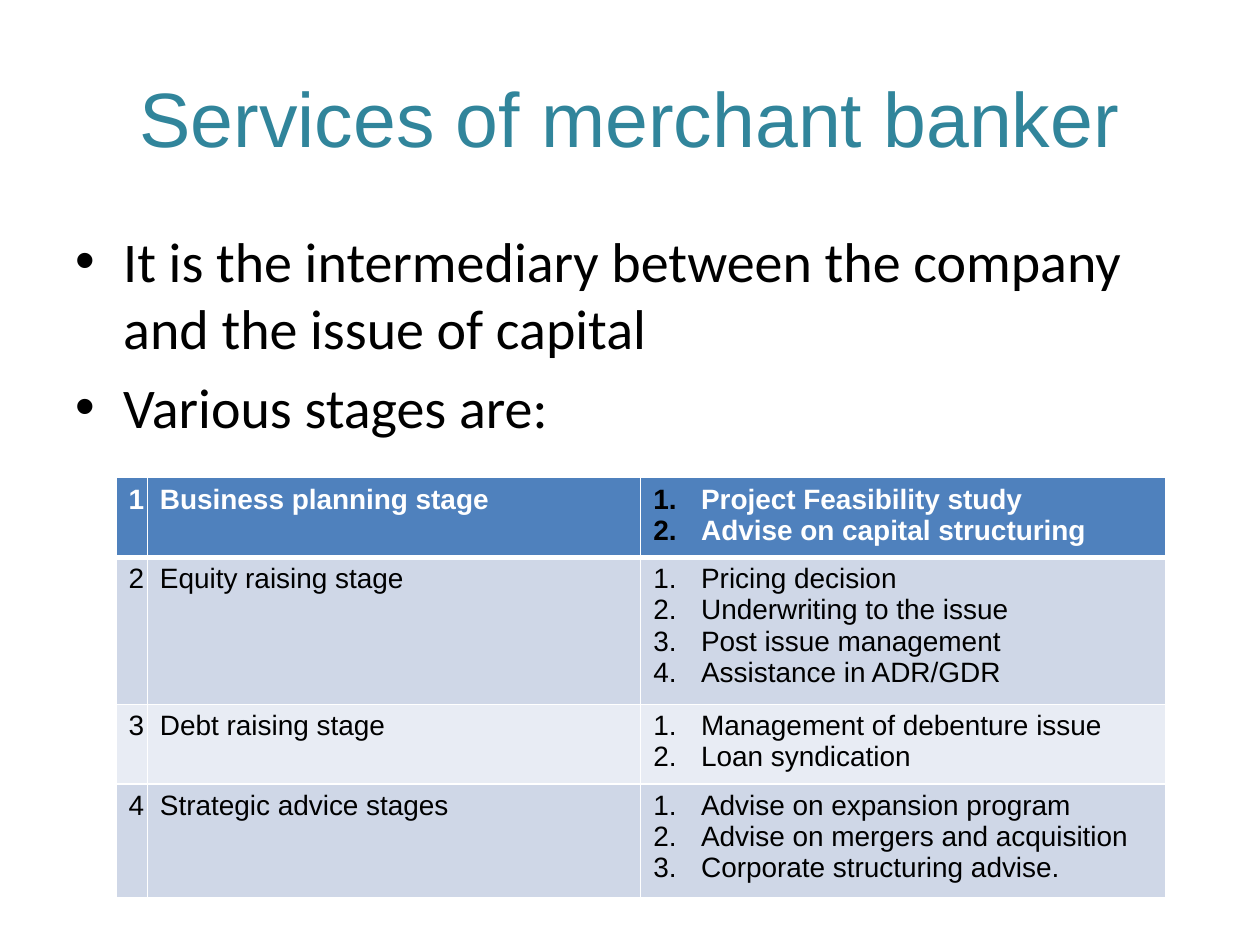
from lxml.etree import SubElement
from pptx import Presentation
from pptx.dml.color import RGBColor as RGB
from pptx.enum.text import MSO_ANCHOR as ANCHOR, PP_ALIGN as ALIGN
from pptx.oxml.ns import qn
from pptx.util import Inches, Pt

TEAL = RGB(0x31, 0x85, 0x9B)
BLACK = RGB(0, 0, 0)
WHITE = RGB(255, 255, 255)
BLUE = RGB(0x4F, 0x81, 0xBD)
BAND_DARK = RGB(0xCF, 0xD7, 0xE7)
BAND_LIGHT = RGB(0xE8, 0xEC, 0xF4)

TITLE_BOX = (0.5, 0.3, 9, 1.25)
BODY_BOX = (0.5, 1.75, 9, 4.95)
TABLE_BOX = (0.92, 3.79, 8.33, 3.1)
COLUMN_SHARES = (0.03, 0.47, 0.5)
LINE_HEIGHT, ROW_PADDING, HANGING = 0.245, 0.1, 0.38

TITLE_FONT = dict(name="Arial", size=Pt(44))
BODY_FONT = dict(name="Calibri", size=Pt(32))
CELL_FONT = dict(name="Arial", size=Pt(16))

POINTS = (
    "It is the intermediary between the company and the issue of capital",
    "Various stages are:",
)
STAGES = (
    ("Business planning stage",
     ("Project Feasibility study", "Advise on capital structuring")),
    ("Equity raising stage",
     ("Pricing decision", "Underwriting to the issue",
      "Post issue management", "Assistance in ADR/GDR")),
    ("Debt raising stage",
     ("Management of debenture issue", "Loan syndication")),
    ("Strategic advice stages",
     ("Advise on expansion program", "Advise on mergers and acquisition",
      "Corporate structuring advise.")),
)


def add_solid(parent, tag, color):
    """Append a colour element to an XML parent, wrapped in the given tag."""
    SubElement(SubElement(parent, qn(tag)), qn("a:srgbClr")).set("val", str(color))


def add_bullet(p, tag, **attributes):
    """Give a paragraph a hanging indent and a black bullet or number."""
    pPr = p._p.get_or_add_pPr()
    pPr.set("marL", str(Inches(HANGING)))
    pPr.set("indent", str(-Inches(HANGING)))
    add_solid(pPr, "a:buClr", BLACK)
    SubElement(pPr, qn("a:buFont")).set("typeface", "Arial")
    bullet = SubElement(pPr, qn(tag))
    for key, value in attributes.items():
        bullet.set(key, value)


def write_lines(tf, lines, color, font):
    """Write one formatted paragraph per line and return the paragraphs."""
    for i, line in enumerate(lines):
        p = tf.add_paragraph() if i else tf.paragraphs[0]
        r = p.add_run()
        r.text = line
        r.font.color.rgb = color
        for key, value in font.items():
            setattr(r.font, key, value)
    return tf.paragraphs


def add_title(slide, box):
    """Place and format the title placeholder."""
    sp = slide.shapes.title
    for key, value in zip(("left", "top", "width", "height"), box):
        setattr(sp, key, Inches(value))
    tf = sp.text_frame
    tf.vertical_anchor = ANCHOR.MIDDLE
    p, = write_lines(tf, ["Services of merchant banker"], TEAL, TITLE_FONT)
    p.alignment = ALIGN.CENTER


def add_body(slide, box):
    """Place the bulleted introduction."""
    tf = slide.shapes.add_textbox(*map(Inches, box)).text_frame
    tf.word_wrap = True
    for i, p in enumerate(write_lines(tf, POINTS, BLACK, BODY_FONT)):
        p.space_before = Pt(6.4 if i else 0)
        add_bullet(p, "a:buChar", char="•")


def format_cell(cell, fill, bottom):
    """Give a cell white borders and a solid fill."""
    tcPr = cell._tc.get_or_add_tcPr()
    for side, width in zip("LRTB", (1, 1, 1, bottom)):
        ln = SubElement(tcPr, qn(f"a:ln{side}"))
        ln.set("w", str(Pt(width)))
        add_solid(ln, "a:solidFill", WHITE)
    cell.fill.solid()
    cell.fill.fore_color.rgb = fill


def add_stage_table(slide, box):
    """Place the table of stages with their numbered services."""
    table = slide.shapes.add_table(
        len(STAGES), len(COLUMN_SHARES), *map(Inches, box)).table
    for column, share in zip(table.columns, COLUMN_SHARES):
        column.width = Inches(box[2] * share)
    for i, (stage, services) in enumerate(STAGES):
        header = i == 0
        fill = BLUE if header else BAND_DARK if i % 2 else BAND_LIGHT
        color = WHITE if header else BLACK
        font = dict(CELL_FONT, bold=header)
        row = table.rows[i]
        row.height = Inches(ROW_PADDING + LINE_HEIGHT * len(services))
        for cell, lines in zip(row.cells, ([str(i + 1)], [stage], services)):
            format_cell(cell, fill, 3 if header else 1)
            paragraphs = write_lines(cell.text_frame, lines, color, font)
            if lines is services:
                for p in paragraphs:
                    add_bullet(p, "a:buAutoNum", type="arabicPeriod")


def main():
    """Build and save the slide."""
    prs = Presentation()
    prs.slide_width, prs.slide_height = Inches(10), Inches(7.5)
    slide = prs.slides.add_slide(prs.slide_layouts[5])
    add_title(slide, TITLE_BOX)
    add_body(slide, BODY_BOX)
    add_stage_table(slide, TABLE_BOX)
    prs.save("out.pptx")


if __name__ == "__main__":
    main()
